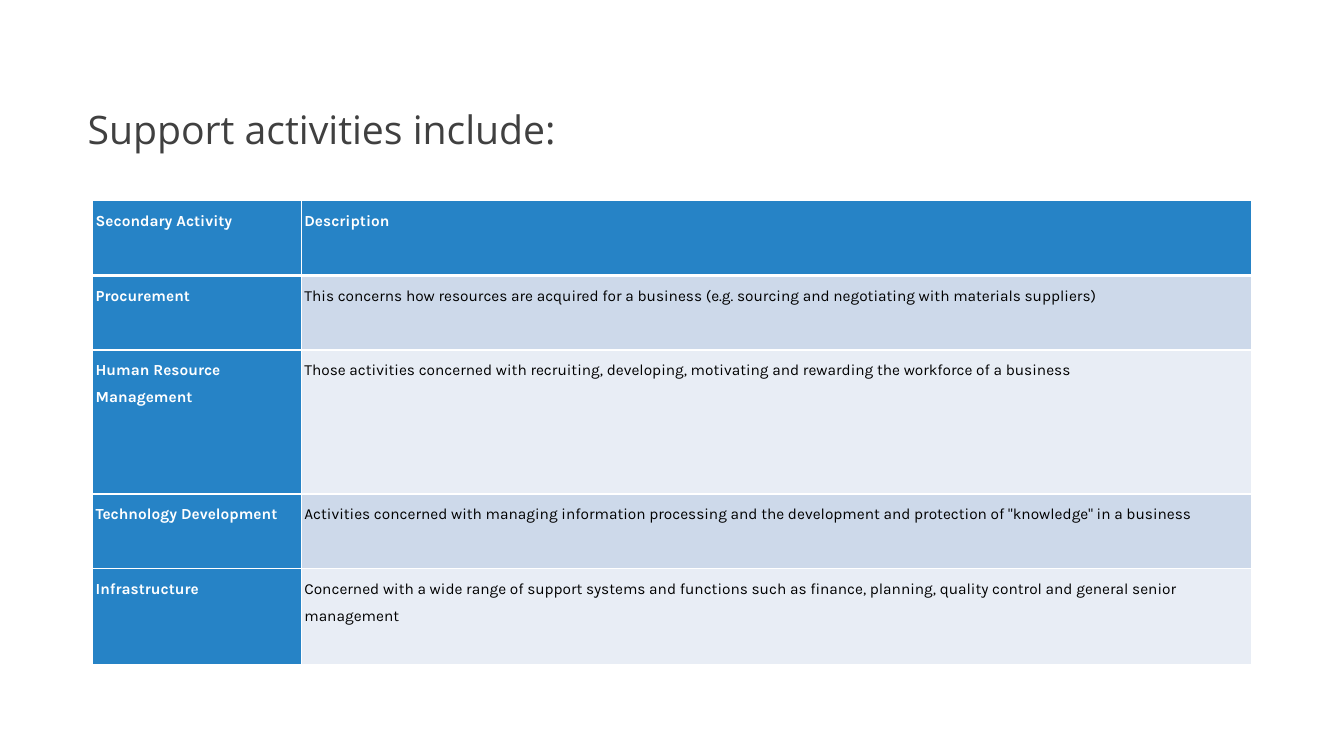
from lxml import etree
from pptx import Presentation
from pptx import util as u
from pptx.dml.color import RGBColor
from pptx.enum import text as t
from pptx.oxml import ns

WHITE = RGBColor(0xFF, 0xFF, 0xFF)
BLACK = RGBColor(0, 0, 0)
GREY = RGBColor(0x40, 0x40, 0x40)
BLUE = RGBColor(0x26, 0x83, 0xC6)
BANDS = RGBColor(0xCD, 0xD9, 0xEA), RGBColor(0xE8, 0xED, 0xF5)

COLS = 5.26, 23.95
ROWS = [
    (1.88, "Secondary Activity", "Description"),
    (1.88, "Procurement",
     "This concerns how resources are acquired for a business "
     "(e.g. sourcing and negotiating with materials suppliers)"),
    (3.63, "Human Resource Management",
     "Those activities concerned with recruiting, developing, "
     "motivating and rewarding the workforce of a business"),
    (1.88, "Technology Development",
     "Activities concerned with managing information processing and "
     "the development and protection of \"knowledge\" in a business"),
    (2.41, "Infrastructure",
     "Concerned with a wide range of support systems and functions such as "
     "finance, planning, quality control and general senior management"),
]


def write(frame, words, font, size, color, bold=False, line=1.0, after=0):
    """Put one formatted paragraph into a text frame."""
    frame.word_wrap = True
    para = frame.paragraphs[0]
    para.line_spacing = line
    para.space_after = u.Pt(after)
    run = para.add_run()
    run.text = words
    run.font.name = font
    run.font.size = u.Pt(size)
    run.font.bold = bold
    run.font.color.rgb = color


def edge(cell, side, width):
    """Draw one white border of a cell."""
    line = etree.SubElement(cell._tc.get_or_add_tcPr(), ns.qn("a:" + side),
                            w=str(u.Pt(width)))
    fill = etree.SubElement(line, ns.qn("a:solidFill"))
    etree.SubElement(fill, ns.qn("a:srgbClr"), val=str(WHITE))


def title(slide, left, top, width, height):
    """Place the heading near the foot of its box."""
    box = slide.shapes.add_textbox(u.Cm(left), u.Cm(top), u.Cm(width), u.Cm(height))
    frame = box.text_frame
    frame.vertical_anchor = t.MSO_ANCHOR.BOTTOM
    frame.margin_bottom = u.Cm(1.2)
    write(frame, "Support activities include:", "Open Sans", 28, GREY, line=0.9)


def grid(slide, left, top):
    """Place the table of activities from its top left corner."""
    high = sum(row[0] for row in ROWS)
    table = slide.shapes.add_table(len(ROWS), len(COLS), u.Cm(left), u.Cm(top),
                                   u.Cm(sum(COLS)), u.Cm(high)).table
    for col, width in zip(table.columns, COLS):
        col.width = u.Cm(width)
    for r, (height, *words) in enumerate(ROWS):
        table.rows[r].height = u.Cm(height)
        for c, word in enumerate(words):
            cell = table.cell(r, c)
            head = r == 0 or c == 0
            cell.margin_left = cell.margin_right = u.Cm(0.07)
            cell.margin_top = cell.margin_bottom = u.Cm(0.07)
            for side in ("lnL", "lnR", "lnT", "lnB"):
                thick = (r, side) in ((0, "lnB"), (1, "lnT"))
                edge(cell, side, 3 if thick else 1)
            cell.fill.solid()
            cell.fill.fore_color.rgb = BLUE if head else BANDS[(r - 1) % 2]
            write(cell.text_frame, word, "Karla", 11, WHITE if head else BLACK,
                  bold=head, line=1.5, after=10)


def main():
    """Build and save the slide."""
    deck = Presentation()
    deck.slide_width, deck.slide_height = u.Cm(33.87), u.Cm(19.05)
    slide = deck.slides.add_slide(deck.slide_layouts[6])
    title(slide, 1.96, 1.52, 29.44, 3.53)
    grid(slide, 2.34, 5.06)
    deck.save("out.pptx")


if __name__ == "__main__":
    main()
